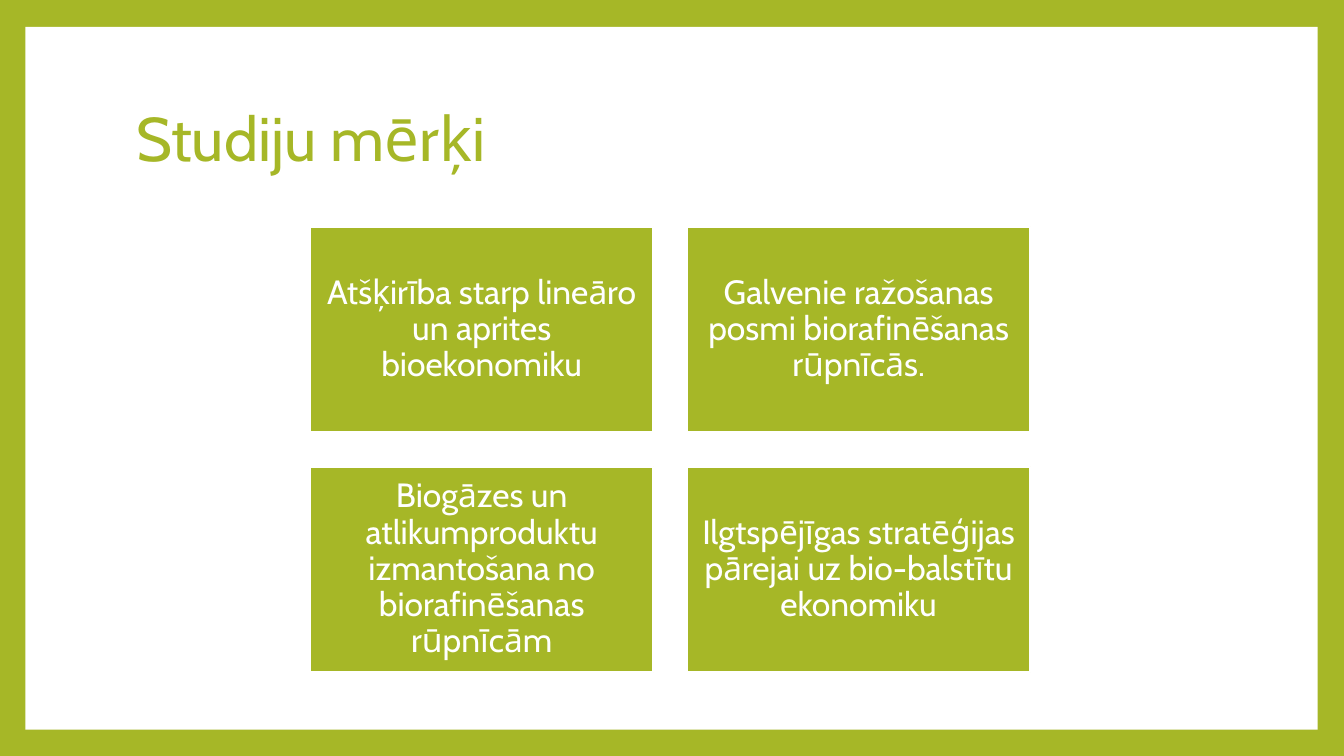
from pptx import Presentation
from pptx import util as u
from pptx.dml.color import RGBColor
from pptx.enum import shapes, text

GREEN = "A6B727"
WHITE = "FFFFFF"
FONT = "Cabin"


def color(hex_string):
    return RGBColor.from_string(hex_string)


def write(shape, words, size, hex_string, alignment, margin):
    frame = shape.text_frame
    frame.text = words
    frame.word_wrap = True
    frame.vertical_anchor = text.MSO_ANCHOR.MIDDLE
    frame.margin_left = frame.margin_right = u.Cm(0.25)
    frame.margin_top = frame.margin_bottom = u.Cm(margin)
    paragraph = frame.paragraphs[0]
    paragraph.alignment = alignment
    paragraph.line_spacing = 0.9
    font = paragraph.runs[0].font
    font.name = FONT
    font.size = u.Pt(size)
    font.color.rgb = color(hex_string)


presentation = Presentation()
presentation.slide_width = u.Cm(33.87)
presentation.slide_height = u.Cm(19.05)
slide = presentation.slides.add_slide(presentation.slide_layouts[6])

# Green border around a white panel
slide.background.fill.solid()
slide.background.fill.fore_color.rgb = color(GREEN)
panel = slide.shapes.add_shape(
    shapes.MSO_SHAPE.RECTANGLE, u.Cm(0.64), u.Cm(0.68), u.Cm(32.57), u.Cm(17.71))
panel.shadow.inherit = False
panel.fill.solid()
panel.fill.fore_color.rgb = color(WHITE)
panel.line.fill.background()

# Title
title = slide.shapes.add_textbox(u.Cm(3.18), u.Cm(1.7), u.Cm(27.43), u.Cm(3.76))
write(title, "Studiju mērķi", 44, GREEN, text.PP_ALIGN.LEFT, 0.13)

# Study goals in a two by two grid
goals = [
    "Atšķirība starp lineāro un aprites bioekonomiku",
    "Galvenie ražošanas posmi biorafinēšanas rūpnīcās.",
    "Biogāzes un atlikumproduktu izmantošana no biorafinēšanas rūpnīcām",
    "Ilgtspējīgas stratēģijas pārejai uz bio-balstītu ekonomiku",
]
width, height, gap = 8.64, 5.18, 0.86
for index, goal in enumerate(goals):
    row, column = divmod(index, 2)
    box = slide.shapes.add_shape(
        shapes.MSO_SHAPE.RECTANGLE,
        u.Cm(7.82 + column * (width + gap)), u.Cm(5.72 + row * (height + gap)),
        u.Cm(width), u.Cm(height))
    box.shadow.inherit = False
    box.fill.solid()
    box.fill.fore_color.rgb = color(GREEN)
    box.line.color.rgb = color(WHITE)
    box.line.width = u.Pt(1.5)
    write(box, goal, 24, WHITE, text.PP_ALIGN.CENTER, 0.25)

presentation.save("out.pptx")
